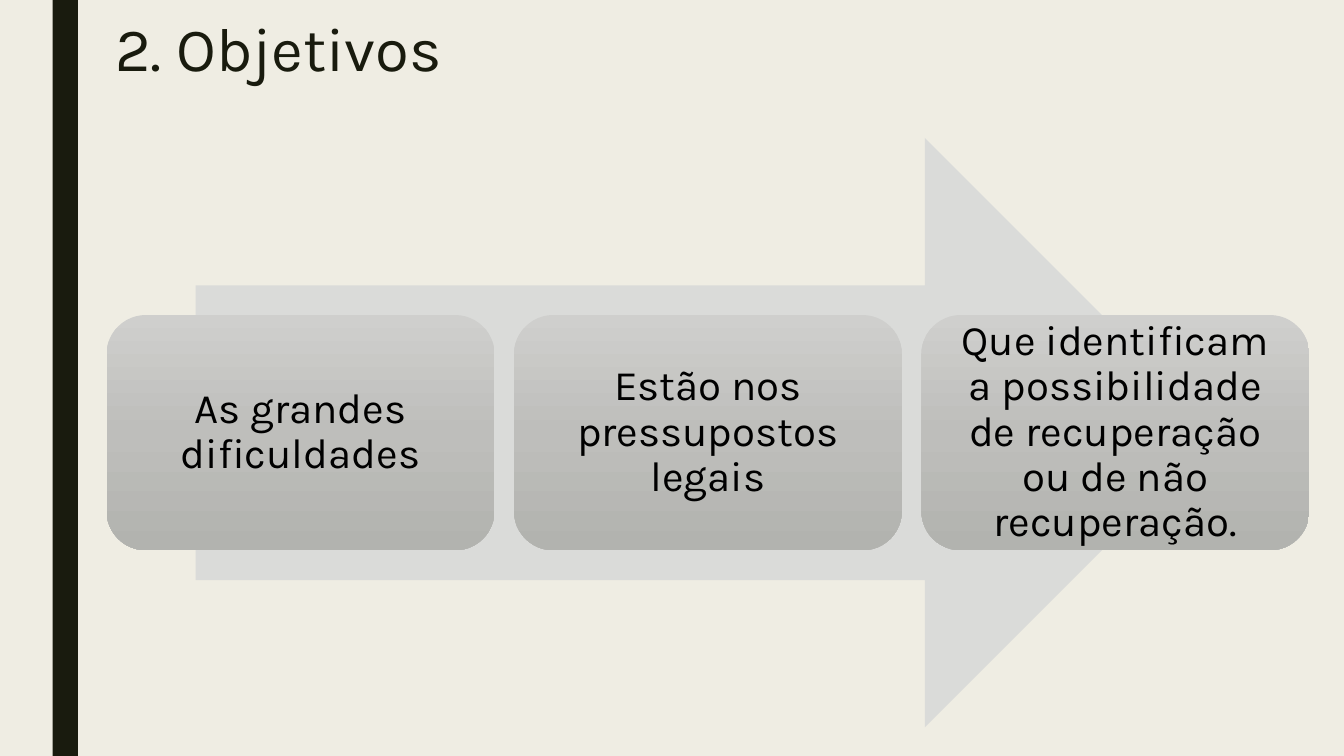
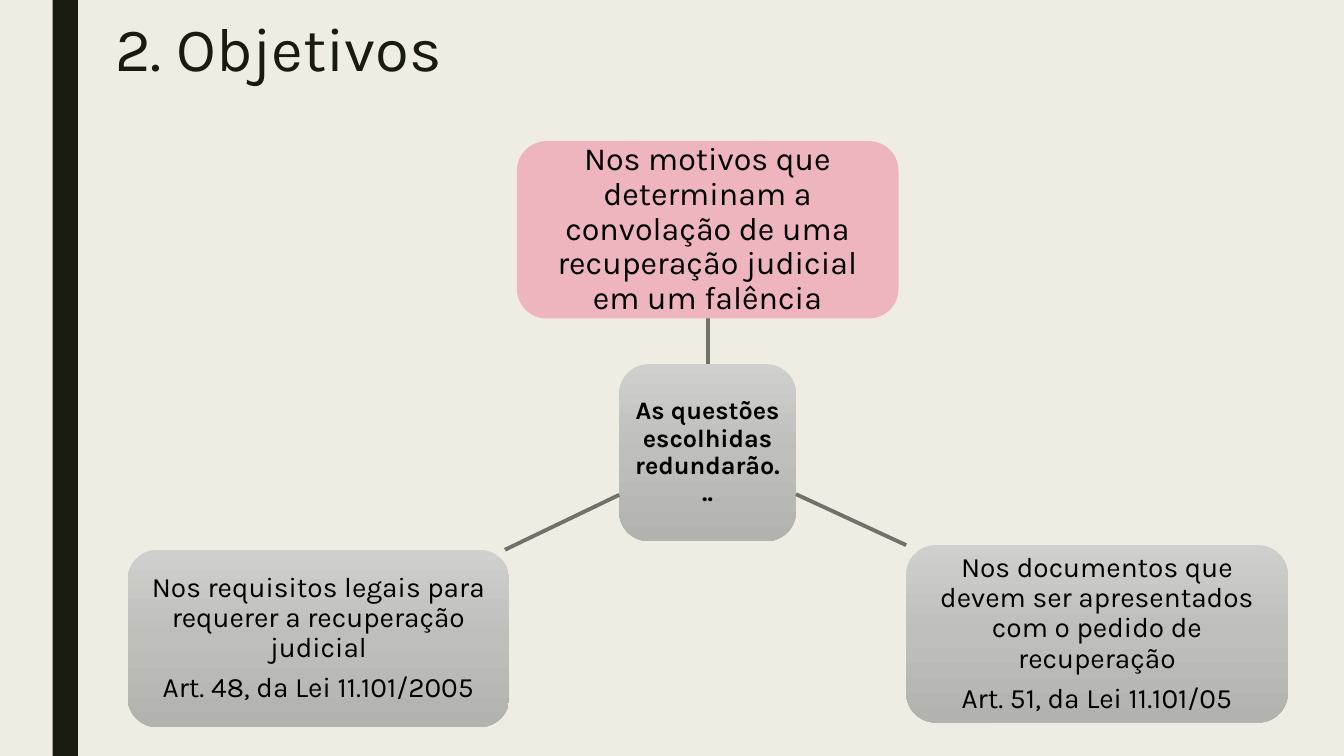
import copy

import pptx
import pptx.dml.color
import pptx.enum.shapes
import pptx.enum.text
import pptx.oxml.ns
import pptx.util
from lxml import etree

Pt = pptx.util.Pt
Shape = pptx.enum.shapes.MSO_SHAPE
Align = pptx.enum.text.PP_ALIGN
Anchor = pptx.enum.text.MSO_ANCHOR
qn = pptx.oxml.ns.qn

# Shared style
FONT = "Karla"
PAPER, DARK, BLACK = "EFEDE3", "191B0E", "000000"
ARROW, PINK, LINE = "DADBD9", "EEB5BF", "70716B"
GREYS = ["CFCFCD", "BEBEBB", "B2B3AF"]
TITLE = "2. Objetivos"


def color(code):
    return pptx.dml.color.RGBColor.from_string(code)


def style(frame, size, code, align, space, bold=False):
    for para in frame.paragraphs:
        para.alignment = align
        para.line_spacing = space
        for run in para.runs:
            font = run.font
            font.name, font.size, font.bold = FONT, Pt(size), bold
            font.color.rgb = color(code)


def shade(shape, codes):
    """Fill from top to bottom with three evenly spaced colours."""
    fill = shape.fill
    fill.gradient()
    fill.gradient_angle = 270
    first = shape.element.spPr.find(".//" + qn("a:gs"))
    first.addnext(copy.deepcopy(first))
    for index, (stop, code) in enumerate(zip(fill.gradient_stops, codes)):
        stop.position = index / (len(codes) - 1)
        stop.color.rgb = color(code)


def add_form(slide, kind, place, fill):
    shape = slide.shapes.add_shape(kind, *map(Pt, place))
    shape.shadow.inherit = False
    shape.line.fill.background()
    if isinstance(fill, list):
        shade(shape, fill)
    else:
        shape.fill.solid()
        shape.fill.fore_color.rgb = color(fill)
    return shape


def add_card(slide, place, text, size, inset, fill=GREYS, bold=False):
    card = add_form(slide, Shape.ROUNDED_RECTANGLE, place, fill)
    frame = card.text_frame
    frame.word_wrap = True
    frame.vertical_anchor = Anchor.MIDDLE
    frame.margin_left = frame.margin_right = Pt(inset)
    frame.margin_top = frame.margin_bottom = Pt(inset)
    frame.text = text
    style(frame, size, BLACK, Align.CENTER, 0.9, bold)
    for para in frame.paragraphs[:-1]:
        para.space_after = Pt(0.35 * size)


def add_link(slide, start, end):
    link = slide.shapes.add_connector(
        pptx.enum.shapes.MSO_CONNECTOR.STRAIGHT, *map(Pt, start + end))
    link.line.color.rgb = color(LINE)
    link.line.width = Pt(2.75)
    etree.SubElement(link.element.spPr, qn("a:effectLst"))


def add_page(deck):
    slide = deck.slides.add_slide(deck.slide_layouts[5])
    add_form(slide, Shape.RECTANGLE, (37.6, 0, 18.1, 540), DARK)
    title = slide.shapes.title
    title.left, title.top, title.width, title.height = map(
        Pt, (75, 10, 861, 79))
    frame = title.text_frame
    frame.text = TITLE
    frame.word_wrap = True
    frame.auto_size = pptx.enum.text.MSO_AUTO_SIZE.NONE
    frame.vertical_anchor = Anchor.TOP
    style(frame, 44, DARK, Align.LEFT, 0.89)
    return slide


def add_steps(deck):
    """Three cards in a row across a wide arrow."""
    slide = add_page(deck)
    add_form(slide, Shape.RIGHT_ARROW, (139.8, 98.6, 731.3, 421), ARROW)
    left, top, wide, high, gap = 76.2, 225, 277, 168, 14
    steps = [
        "As grandes dificuldades",
        "Estão nos pressupostos legais",
        "Que identificam a possibilidade de recuperação"
        " ou de não recuperação.",
    ]
    for index, text in enumerate(steps):
        place = (left + index * (wide + gap), top, wide, high)
        add_card(slide, place, text, 30, 9.5)


def add_hub(deck):
    """A central card linked to three outer cards."""
    slide = add_page(deck)
    wide, high = 272.6, 126.7
    add_card(slide, (442.3, 260.2, 126.3, 126.3),
             "As questões escolhidas redundarão...", 18, 3.6, bold=True)
    # Left, top, text, size, fill, link start, link end
    outer = [
        (647.3, 389.4, "Nos documentos que devem ser apresentados"
         " com o pedido de recuperação\nArt. 51, da Lei 11.101/05",
         20, GREYS, (568.6, 353), (647.3, 389.4)),
        (369.2, 100.8, "Nos motivos que determinam a convolação de uma"
         " recuperação judicial em um falência",
         23, PINK, (505.5, 260.2), (505.5, 227.5)),
        (91.2, 392.7, "Nos requisitos legais para requerer a"
         " recuperação judicial\nArt. 48, da Lei 11.101/2005",
         20, GREYS, (442.3, 353.5), (360.7, 392.7)),
    ]
    for left, top, text, size, fill, start, end in outer:
        add_link(slide, start, end)
        add_card(slide, (left, top, wide, high), text, size, 4.3, fill)


def main():
    deck = pptx.Presentation()
    deck.slide_width, deck.slide_height = Pt(960), Pt(540)
    back = deck.slide_master.background.fill
    back.solid()
    back.fore_color.rgb = color(PAPER)
    add_steps(deck)
    add_hub(deck)
    deck.save("out.pptx")


if __name__ == "__main__":
    main()
